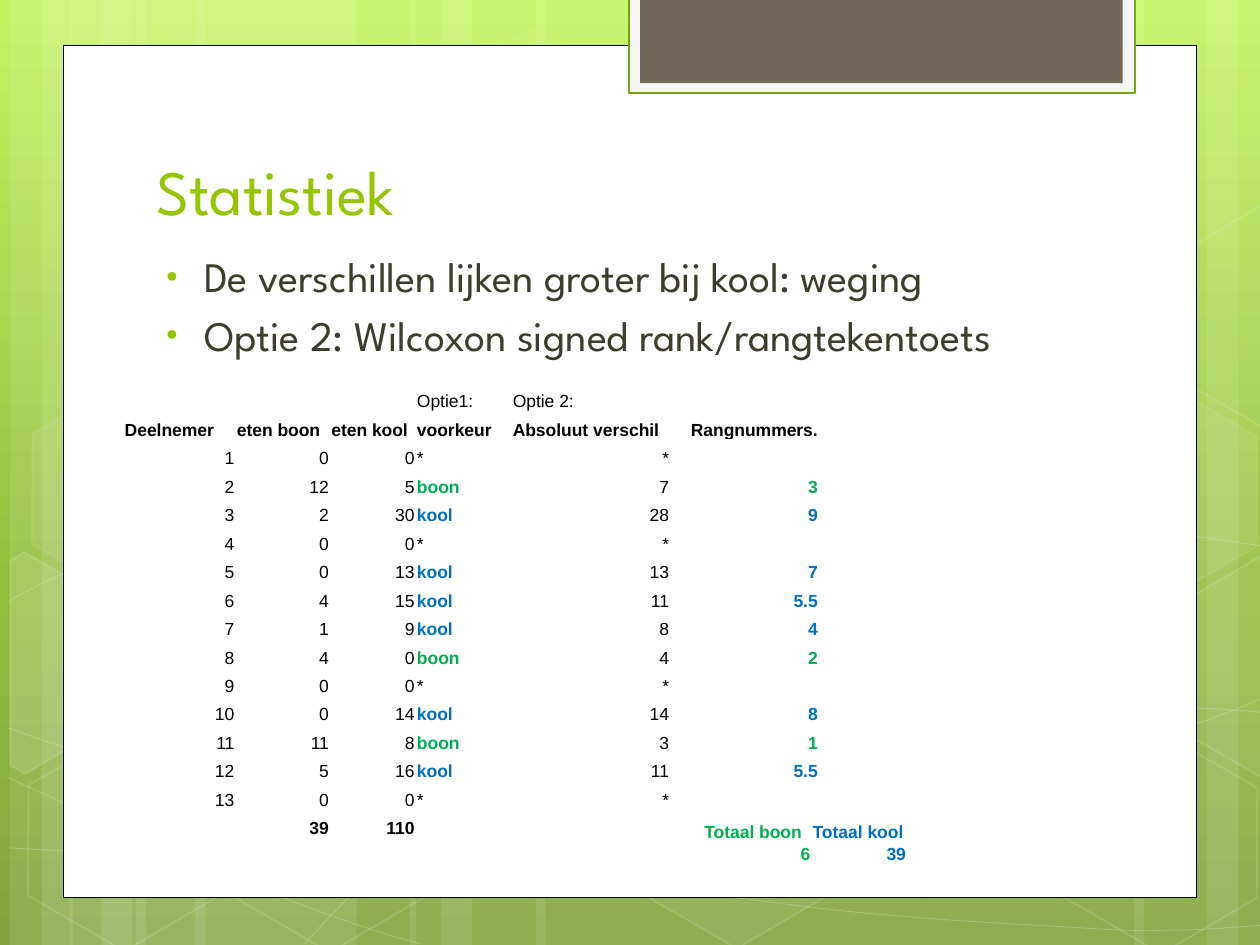
import copy
import dataclasses
import math

import lxml.etree
import pptx
import pptx.dml.color
import pptx.enum.shapes
import pptx.enum.text
import pptx.oxml.ns
import pptx.util

Inches = pptx.util.Inches
Pt = pptx.util.Pt
qn = pptx.oxml.ns.qn
SHAPE = pptx.enum.shapes.MSO_SHAPE
ALIGN = pptx.enum.text.PP_ALIGN
ANCHOR = pptx.enum.text.MSO_ANCHOR

COLORS = {
    "sky": "C3F35F", "grass": "93BF3F", "moss": "81A53E",
    "white": "FFFFFF", "ink": "000000", "tab": "F5F5F5",
    "tab_line": "74A510", "tab_core": "71685A",
    "title": "94C600", "body": "3E3D2D",
    "boon": "00B050", "kool": "0070C0",
}


@dataclasses.dataclass
class Cell:
    text: str = ""
    color: str = "ink"
    bold: bool = False
    right: bool = False


def rgb(name):
    return pptx.dml.color.RGBColor.from_string(COLORS[name])


def turn(point, centre, degrees):
    a = math.radians(degrees)
    dx, dy = point[0] - centre[0], point[1] - centre[1]
    return (centre[0] + dx * math.cos(a) - dy * math.sin(a),
            centre[1] + dx * math.sin(a) + dy * math.cos(a))


class Deck:
    heading_font = "League Spartan"
    table_font = "Arial"

    def __init__(self, prs):
        self.s = prs.slides.add_slide(prs.slide_layouts[1])

    def background(self, stops):
        fill = self.s.background.fill
        fill.gradient()
        fill.gradient_angle = 270
        gs_list = self.s.element.find(".//" + qn("a:gsLst"))
        while len(gs_list) < len(stops):
            gs_list.append(copy.deepcopy(gs_list[0]))
        for stop, (position, color) in zip(fill.gradient_stops, stops):
            stop.position = position
            stop.color.rgb = rgb(color)

    def paint(self, sp, fill=None, alpha=100, line=None, width=1, line_alpha=100):
        sp.shadow.inherit = False
        for part, color in ((sp.fill, fill), (sp.line.fill, line)):
            if color:
                part.solid()
                part.fore_color.rgb = rgb(color)
            else:
                part.background()
        if line:
            sp.line.width = Pt(width)
        props = sp.element.spPr
        for found, opacity in ((props.find(qn("a:solidFill")), alpha),
                               (props.find(qn("a:ln") + "/" + qn("a:solidFill")), line_alpha)):
            if found is not None and opacity < 100:
                lxml.etree.SubElement(found[0], qn("a:alpha")).set("val", str(opacity * 1000))

    def shape(self, kind, at, rotation=0, **style):
        sp = self.s.shapes.add_shape(kind, *map(Inches, at))
        sp.rotation = rotation
        self.paint(sp, **style)
        return sp

    def outline(self, points, close=False, **style):
        start, *rest = [tuple(map(Inches, point)) for point in points]
        builder = self.s.shapes.build_freeform(*start)
        builder.add_line_segments(rest, close=close)
        sp = builder.convert_to_shape()
        self.paint(sp, **style)
        return sp

    def curve(self, points, **style):
        """Joined cubic curves: a start, then two handles and an end per curve."""
        sp = self.outline(points, **style)
        path = sp.element.find(".//" + qn("a:path"))
        segments = path.findall(qn("a:lnTo"))
        for i in range(0, len(segments), 3):
            cubic = lxml.etree.SubElement(path, qn("a:cubicBezTo"))
            for segment in segments[i:i + 3]:
                cubic.append(segment[0])
                path.remove(segment)

    def move_to_master(self):
        """Hand the shapes drawn so far to the master, behind its placeholders."""
        target = self.s.slide_layout.slide_master.shapes.element
        drawn = [sp for sp in self.s.shapes if not sp.is_placeholder]
        for i, sp in enumerate(drawn):
            target.insert(2 + i, sp.element)

    def placeholder(self, index, at, lines, size, color, anchor):
        sp = self.s.placeholders[index]
        sp.left, sp.top, sp.width, sp.height = map(Inches, at)
        tf = sp.text_frame
        tf.auto_size = pptx.enum.text.MSO_AUTO_SIZE.NONE
        tf.vertical_anchor = anchor
        for i, line in enumerate(lines):
            p = tf.add_paragraph() if i else tf.paragraphs[0]
            p.alignment = ALIGN.LEFT
            self.run(p, line, self.heading_font, size, color)
        return tf

    def run(self, p, text, font, size, color, bold=False):
        r = p.add_run()
        r.text = text
        r.font.name, r.font.size, r.font.bold = font, Pt(size), bold
        r.font.color.rgb = rgb(color)

    def bullet(self, p):
        props = p._p.get_or_add_pPr()
        props.set("marL", str(Inches(0.38)))
        props.set("indent", str(Inches(-0.3)))
        color = lxml.etree.SubElement(props, qn("a:buClr"))
        lxml.etree.SubElement(color, qn("a:srgbClr")).set("val", COLORS["title"])
        lxml.etree.SubElement(props, qn("a:buSzPct")).set("val", "76000")
        lxml.etree.SubElement(props, qn("a:buChar")).set("char", "•")

    def table(self, left, top, widths, height, rows):
        frame = self.s.shapes.add_table(len(rows), len(widths), Inches(left), Inches(top),
                                        Inches(sum(widths)), Inches(height))
        table = frame.table
        table.first_row = table.horz_banding = False
        for column, width in zip(table.columns, widths):
            column.width = Inches(width)
        for i, row in enumerate(rows):
            for j, content in enumerate(row):
                self.fill_cell(table.cell(i, j), content)

    def fill_cell(self, cell, content):
        cell.fill.background()
        cell.vertical_anchor = ANCHOR.BOTTOM
        cell.margin_left = cell.margin_right = cell.margin_top = Inches(0.01)
        cell.margin_bottom = 0
        p = cell.text_frame.paragraphs[0]
        if content.text:
            p.alignment = ALIGN.RIGHT if content.right else ALIGN.LEFT
            self.run(p, content.text, self.table_font, 10, content.color, content.bold)
        else:  # keeps the empty row from growing
            lxml.etree.SubElement(p._p, qn("a:endParaRPr")).set("sz", "1000")


BANDS = [(1.08, 1.75), (0.08, 0.5), (0.33, 0.83), (1.55, 1.75), (0.55, 0.5), (0.8, 0.83),
         (7.33, 1.75), (9.58, 0.5), (9, 0.83), (4.25, 3.08), (3.25, 0.5), (3.5, 0.83)]
CURVES = [
    [(0.07, 6.73), (0.61, 6.76), (1.15, 6.79), (1.9, 6.78), (2.65, 6.77), (3.58, 6.75), (4.58, 6.65),
     (5.58, 6.55), (7, 6.36), (7.92, 6.17), (8.83, 5.98), (9.77, 5.68), (10.07, 5.51)],
    [(0.07, 4.77), (0.36, 4.61), (0.65, 4.46), (1.21, 4.31), (1.78, 4.16), (2.59, 3.94), (3.47, 3.87),
     (4.36, 3.8), (5.44, 3.79), (6.54, 3.87), (7.64, 3.95), (9.47, 4.26), (10.07, 4.34)],
    [(0.06, 6.17), (1.27, 6.72), (2.47, 7.27), (3.34, 7.49)],
    [(0.07, 5.78), (0.38, 5.89), (0.7, 6), (1.28, 6.16), (1.86, 6.31), (2.73, 6.56), (3.57, 6.73),
     (4.4, 6.9), (5.45, 7.08), (6.28, 7.18), (7.11, 7.29), (8, 7.33), (8.53, 7.36),
     (9.05, 7.4), (9.19, 7.38), (9.45, 7.38), (9.71, 7.37), (9.89, 7.35), (10.07, 7.34)],
    [(2.42, 7.49), (2.6, 7.29), (2.78, 7.09), (3.02, 6.91), (3.26, 6.73), (3.6, 6.53), (3.88, 6.39),
     (4.16, 6.25), (4.33, 6.19), (4.7, 6.09), (5.06, 5.99), (5.73, 5.85), (6.08, 5.78),
     (6.44, 5.71), (6.49, 5.71), (6.8, 5.69), (7.11, 5.66), (7.6, 5.63), (7.94, 5.62),
     (8.29, 5.61), (8.86, 5.62), (8.86, 5.62), (9.08, 5.62), (9.31, 5.62), (9.53, 5.62),
     (9.71, 5.63), (9.88, 5.64), (9.97, 5.65), (10.06, 5.66), (10.03, 5.65), (10.06, 5.66)],
]
# left, top, fill opacity, line opacity
HEXAGONS = [(3.34, 0.36, 4, 8), (4.97, 5.89, 6, 12), (0.11, 5.91, 0, 12), (0.14, 3.12, 7, 8),
            (1.74, 5.92, 0, 12), (7.53, 4.53, 10, 12), (8.34, 5.93, 0, 12), (8.34, 3.14, 7, 8)]
# centre, fill opacity, corners
CUT_HEXAGONS = [
    ((0.36, 5.35), 10, [(0.08, 4.45), (0.19, 4.38), (0.96, 4.82), (0.95, 5.7), (0.2, 6.14), (0.08, 6.07)]),
    ((9.85, 5.2), 4, [(9.26, 4.85), (10.01, 4.41), (10.09, 4.46), (10.09, 6.13), (10.02, 6.17), (9.26, 5.73)]),
    ((9.85, 2.41), 0, [(9.26, 2.07), (10.01, 1.63), (10.1, 1.68), (10.09, 3.35), (10.02, 3.39), (9.26, 2.95)]),
]
# (boon, kool) eaten by each participant
EATEN = [(0, 0), (12, 5), (2, 30), (0, 0), (0, 13), (4, 15), (1, 9),
         (4, 0), (0, 0), (0, 14), (11, 8), (5, 16), (0, 0)]


def draw_backdrop(deck):
    deck.background([(0, "sky"), (0.62, "grass"), (1, "moss")])
    for left, width in BANDS:
        deck.shape(SHAPE.RECTANGLE, (left, 0, width, 7.5), 180 if left > 7 else 0, fill="white", alpha=10)
    for points in CURVES:
        deck.curve(points, line="white", width=0.5, line_alpha=20)
    for left, top, alpha, line_alpha in HEXAGONS:
        sp = deck.shape(SHAPE.HEXAGON, (left, top, 1.75, 1.52), 30, fill="white" if alpha else None,
                        alpha=alpha, line="white", line_alpha=line_alpha)
        sp.adjustments[0] = 0.285
    for centre, alpha, corners in CUT_HEXAGONS:
        sp = deck.outline([turn(c, centre, -30) for c in corners], close=True,
                          fill="white" if alpha else None, alpha=alpha, line="white", line_alpha=12)
        sp.rotation = 30
    deck.shape(SHAPE.RECTANGLE, (0.5, 0.36, 9, 6.76), fill="white", line="ink", width=0.5)
    deck.shape(SHAPE.RECTANGLE, (4.99, -0.02, 4.02, 0.76), fill="tab", line="tab_line", width=1.25)
    deck.shape(SHAPE.RECTANGLE, (5.08, -0.02, 3.83, 0.68), fill="tab_core")
    deck.move_to_master()


def draw_tables(deck):
    def number(value, color="ink", bold=False):
        return Cell(f"{value:g}", color, bold, True)

    gaps = sorted(abs(b - k) for b, k in EATEN if b != k)
    rank_sums = {"boon": 0, "kool": 0}
    choices = [[Cell(), Cell(), Cell(), Cell("Optie1:")],
               [Cell(t, bold=True) for t in ("Deelnemer", "eten boon", "eten kool", "voorkeur")]]
    ranks = [[Cell("Optie 2:"), Cell()],
             [Cell("Absoluut verschil", bold=True), Cell("Rangnummers.", bold=True, right=True)]]
    for person, (boon, kool) in enumerate(EATEN, 1):
        choice, difference, rank = Cell("*"), Cell("*", right=True), Cell()
        if boon != kool:
            winner, gap = "boon" if boon > kool else "kool", abs(boon - kool)
            mean_rank = gaps.index(gap) + (gaps.count(gap) + 1) / 2
            rank_sums[winner] += mean_rank
            choice = Cell(winner, winner, True)
            difference, rank = number(gap), number(mean_rank, winner, True)
        choices.append([number(person), number(boon), number(kool), choice])
        ranks.append([difference, rank])
    choices.append([Cell(), *(number(sum(eaten), bold=True) for eaten in zip(*EATEN)), Cell()])
    totals = [[Cell(f"Totaal {name}", name, True) for name in rank_sums],
              [number(total, name, True) for name, total in rank_sums.items()]]
    deck.table(0.98, 3.04, [0.89, 0.75, 0.68, 0.68], 3.62, choices)
    deck.table(4.06, 3.04, [1.26, 1.18], 3.39, ranks)
    deck.table(5.58, 6.51, [0.86, 0.76], 0.35, totals)


def main():
    prs = pptx.Presentation()
    prs.slide_width, prs.slide_height = Inches(10), Inches(7.5)
    deck = Deck(prs)
    draw_backdrop(deck)
    deck.placeholder(0, (1.14, 1.12, 7.68, 0.74), ["Statistiek"], 36, "title", ANCHOR.BOTTOM)
    body = deck.placeholder(1, (1.14, 1.94, 8.27, 4.44),
                            ["De verschillen lijken groter bij kool: weging",
                             "Optie 2: Wilcoxon signed rank/rangtekentoets"], 24, "body", ANCHOR.TOP)
    for p in body.paragraphs:
        deck.bullet(p)
    draw_tables(deck)
    prs.save("out.pptx")


if __name__ == "__main__":
    main()
